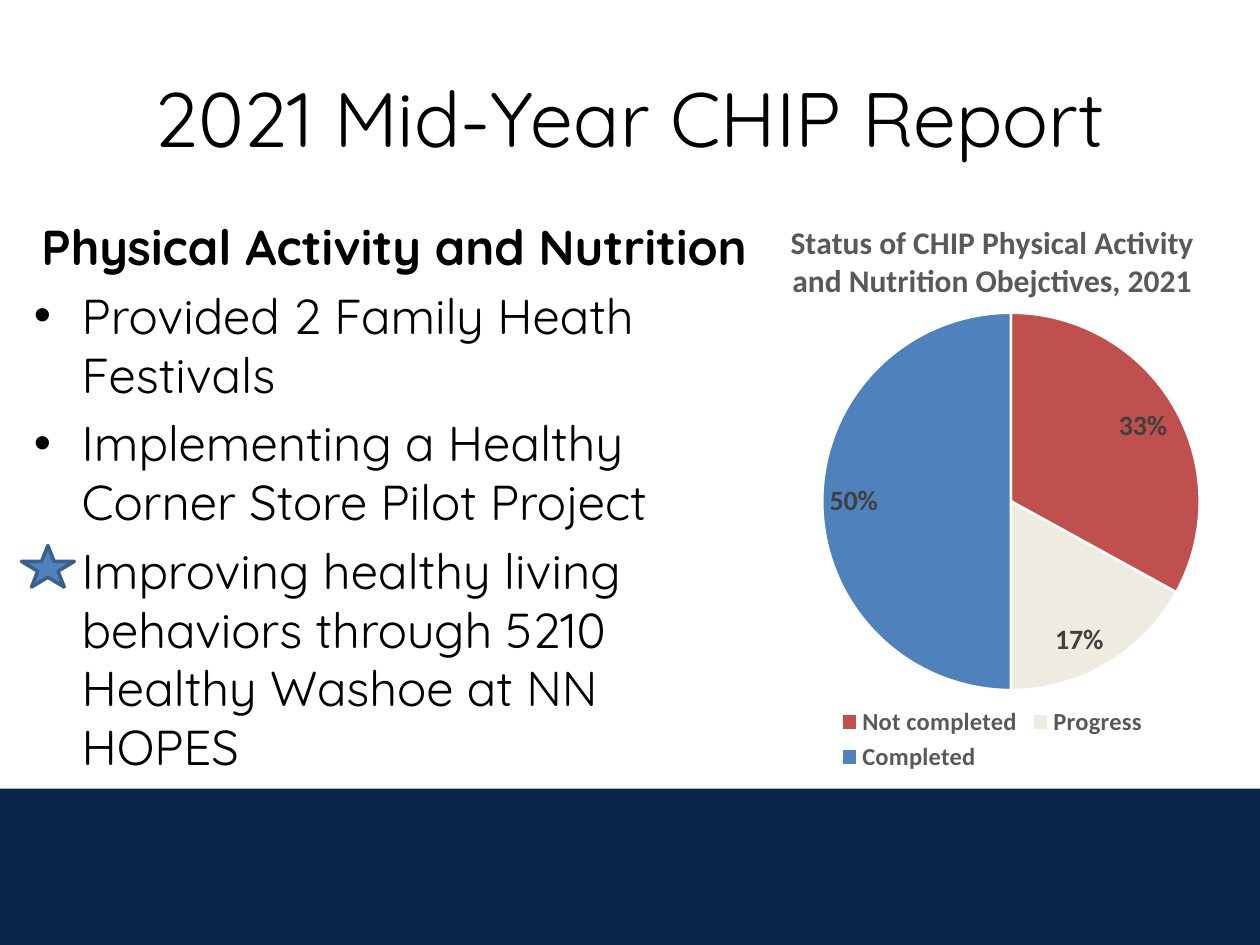
from lxml import etree
from pptx import Presentation
from pptx.chart.data import CategoryChartData
from pptx.dml.color import RGBColor
from pptx.enum.chart import XL_CHART_TYPE as ChartType, XL_LABEL_POSITION as LabelPos, XL_LEGEND_POSITION as LegendPos
from pptx.enum.shapes import MSO_SHAPE as Preset
from pptx.enum.text import MSO_ANCHOR as Anchor, PP_ALIGN as Align
from pptx.oxml.ns import qn
from pptx.util import Inches, Pt

COLORS = {
    "navy": "0A2649", "black": "000000", "white": "FFFFFF",
    "red": "C0504D", "cream": "EEECE1", "blue": "4F81BD", "outline": "3A5F8C",
    "gray": "595959", "dark": "404040",
}

prs = Presentation()
prs.slide_width, prs.slide_height = Inches(10), Inches(7.5)
COLUMN, ROW = prs.slide_width / 100, prs.slide_height / 75
slide = prs.slides.add_slide(prs.slide_layouts[6])
shapes = slide.shapes


def grid(left, top, width, height):
    return [int(n) for n in (left * COLUMN, top * ROW, width * COLUMN, height * ROW)]


def style(font, size, color, bold=False, face="Calibri"):
    font.name, font.size, font.bold = face, Pt(size), bold
    font.color.rgb = RGBColor.from_string(COLORS[color])


footer = shapes.add_shape(Preset.RECTANGLE, *grid(0, 62.6, 100, 12.4))
footer.shadow.inherit = False
footer.fill.solid()
footer.fill.fore_color.rgb = RGBColor.from_string(COLORS["navy"])
footer.line.fill.background()

title = shapes.add_textbox(*grid(5, 3, 90, 12.5)).text_frame
title.word_wrap = True
title.vertical_anchor = Anchor.MIDDLE
heading = title.paragraphs[0]
heading.alignment = Align.CENTER
run = heading.add_run()
run.text = "2021 Mid-Year CHIP Report"
style(run.font, 44, "black", face="Quicksand")

body = shapes.add_textbox(*grid(1.7, 16.7, 59.8, 49.5)).text_frame
body.word_wrap = True
topic = body.paragraphs[0]
topic.space_before = Pt(0)
topic._p.get_or_add_pPr().set("marL", str(Inches(0.06)))
run = topic.add_run()
run.text = "Physical Activity and Nutrition"
style(run.font, 28, "black", True, "Quicksand")

activities = [
    "Provided 2 Family Heath Festivals",
    "Implementing a Healthy Corner Store Pilot Project",
    "Improving healthy living behaviors through 5210 Healthy Washoe at NN HOPES",
]
for activity in activities:
    item = body.add_paragraph()
    item.space_before = Pt(5.6)
    props = item._p.get_or_add_pPr()
    props.set("marL", str(Inches(0.38)))
    props.set("indent", str(-Inches(0.38)))
    etree.SubElement(props, qn("a:buFont"), typeface="Arial")
    etree.SubElement(props, qn("a:buChar"), char="•")
    run = item.add_run()
    run.text = activity
    style(run.font, 28, "black", face="Quicksand")

statuses = [("Not completed", 0.33, "red"), ("Progress", 0.17, "cream"), ("Completed", 0.5, "blue")]
data = CategoryChartData(number_format="0%")
data.categories = [status for status, share, color in statuses]
data.add_series("Series 1", [share for status, share, color in statuses])
chart = shapes.add_chart(ChartType.PIE, *grid(57.5, 15.6, 42.5, 46.1), data).chart
style(chart.font, 10, "black")

chart.has_title = True
run = chart.chart_title.text_frame.paragraphs[0].add_run()
run.text = "Status of CHIP Physical Activity and Nutrition Obejctives, 2021"
style(run.font, 18, "gray", True)
chart.chart_title.include_in_layout = False

chart.has_legend = True
chart.legend.position = LegendPos.BOTTOM
chart.legend.include_in_layout = False
style(chart.legend.font, 14, "gray", True)

pie = chart.plots[0]
pie.vary_by_categories = True
for index, (status, share, color) in enumerate(statuses):
    slice_format = pie.series[0].points[index].format
    slice_format.fill.solid()
    slice_format.fill.fore_color.rgb = RGBColor.from_string(COLORS[color])
    slice_format.line.width = Pt(1.5)
    slice_format.line.color.rgb = RGBColor.from_string(COLORS["white"])

labels = pie.series[0].data_labels
labels.show_value = True
labels.show_percentage = False
labels.number_format, labels.number_format_is_linked = "0%", False
labels.position = LabelPos.INSIDE_END
style(labels.font, 16, "dark", True)

plot_area = chart._chartSpace.chart.plotArea
for stale in plot_area.findall(qn("c:layout")):
    plot_area.remove(stale)
layout = etree.Element(qn("c:layout"))
plot_area.insert(0, layout)
manual = etree.SubElement(layout, qn("c:manualLayout"))
placement = [("layoutTarget", "inner"), ("xMode", "edge"), ("yMode", "edge"),
             ("x", "0.18"), ("y", "0.2"), ("w", "0.71"), ("h", "0.65")]
for tag, value in placement:
    etree.SubElement(manual, qn(f"c:{tag}"), val=value)

star = shapes.add_shape(Preset.STAR_5_POINT, *grid(1.7, 43.3, 4.2, 3.3))
star.shadow.inherit = False
star.fill.solid()
star.fill.fore_color.rgb = RGBColor.from_string(COLORS["blue"])
star.line.color.rgb = RGBColor.from_string(COLORS["outline"])
star.line.width = Pt(2)

prs.save("out.pptx")
